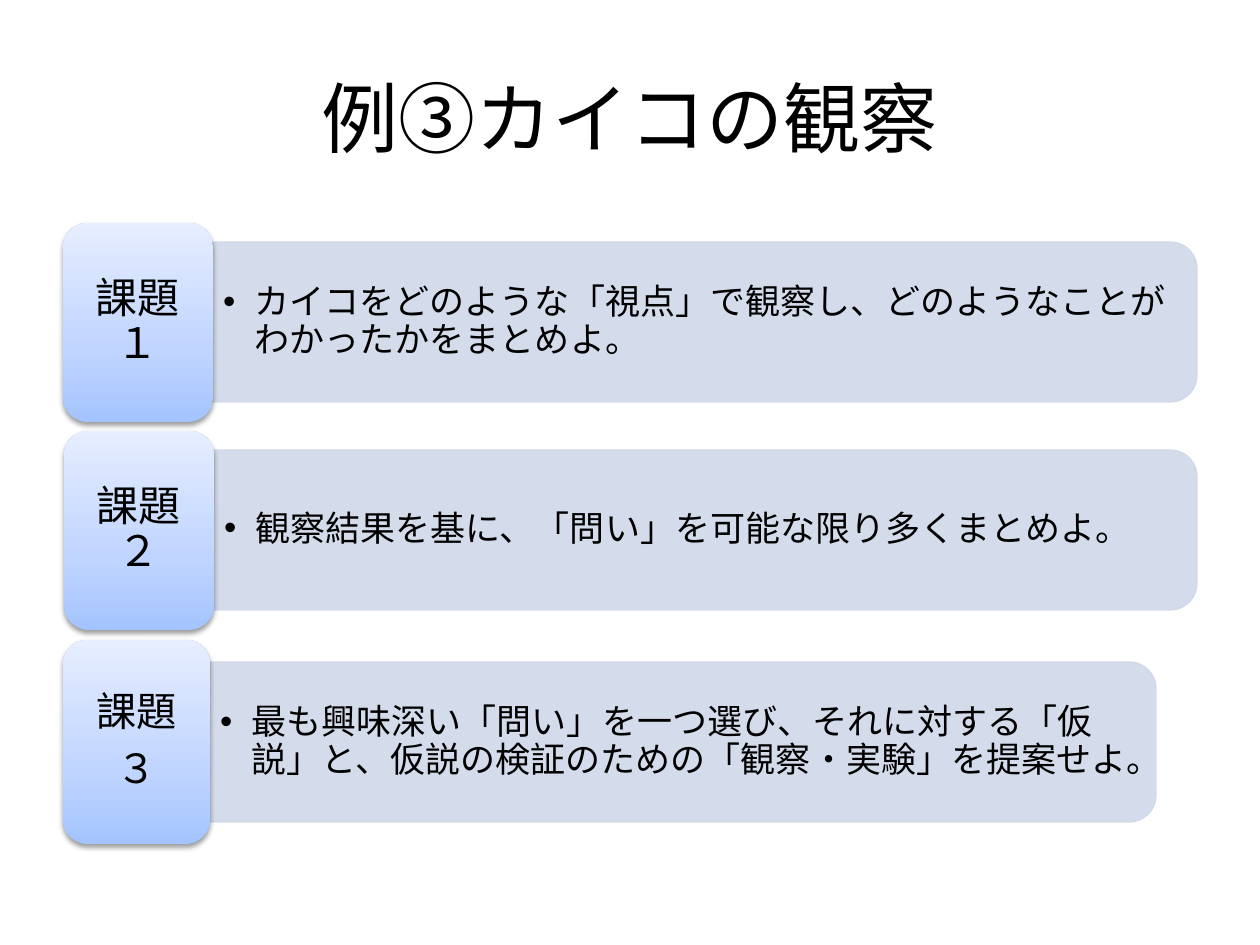
from lxml import etree
from pptx import Presentation
from pptx import util as u
from pptx.dml.color import RGBColor
from pptx.enum import shapes, text
from pptx.oxml import parse_xml
from pptx.oxml.ns import nsdecls, qn

SCALE = 914400 / 126
FONT = "Roboto"
COLORS = {"text": "000000", "panel": "D0D8E8", "low": "A4C4FF",
          "mid": "BFD4FF", "high": "E6EEFF"}
TASKS = [
    ((63, 223, 150, 199), 1197, ["課題１"], 24,
     "カイコをどのような「視点」で観察し、どのようなことがわかったかをまとめよ。"),
    ((64, 431, 150, 199), 1197, ["課題２"], 24,
     "観察結果を基に、「問い」を可能な限り多くまとめよ。"),
    ((63, 640, 147, 204), 1156, ["課題", "３"], 23,
     "最も興味深い「問い」を一つ選び、それに対する「仮説」と、仮説の検証のための「観察・実験」を提案せよ。"),
]
PANEL_H = 160


def px(n):
    return u.Emu(round(n * SCALE))


def add_run(p, words, size):
    r = p.add_run()
    r.text = words
    r.font.size = u.Pt(size)
    r.font.name = FONT
    r.font.color.rgb = RGBColor.from_string(COLORS["text"])


def add_title(s, box):
    sp = s.shapes.title
    sp.left, sp.top, sp.width, sp.height = map(px, box)
    tf = sp.text_frame
    tf.vertical_anchor = text.MSO_ANCHOR.MIDDLE
    p = tf.paragraphs[0]
    p.alignment = text.PP_ALIGN.CENTER
    add_run(p, "例③カイコの観察", 44)


def add_panel(s, box):
    x, y, w, h = box
    sp = s.shapes.add_shape(shapes.MSO_SHAPE.ROUND_2_SAME_RECTANGLE,
                            px(x + (w - h) / 2), px(y + (h - w) / 2), px(h), px(w))
    sp.rotation = 90
    sp.shadow.inherit = False
    sp.line.width = u.Pt(0.75)
    for fill in (sp.fill, sp.line.fill):
        fill.solid()
        fill.fore_color.rgb = RGBColor.from_string(COLORS["panel"])
    for clr in sp._element.spPr.iter(qn("a:srgbClr")):
        etree.SubElement(clr, qn("a:alpha")).set("val", "90000")


def add_bullet(s, box, words):
    tf = s.shapes.add_textbox(*map(px, box)).text_frame
    tf.word_wrap = True
    tf.vertical_anchor = text.MSO_ANCHOR.MIDDLE
    tf.margin_left = tf.margin_right = px(10)
    tf.margin_top = tf.margin_bottom = px(5)
    p = tf.paragraphs[0]
    p.line_spacing = 0.9
    pPr = p._p.get_or_add_pPr()
    pPr.set("marL", str(u.Inches(0.25)))
    pPr.set("indent", str(-u.Inches(0.25)))
    etree.SubElement(pPr, qn("a:buFont")).set("typeface", "Arial")
    etree.SubElement(pPr, qn("a:buChar")).set("char", "•")
    add_run(p, words, 20)


def add_tile(s, box, lines, size):
    sp = s.shapes.add_shape(shapes.MSO_SHAPE.ROUNDED_RECTANGLE, *map(px, box))
    sp.line.fill.background()
    spPr = sp._element.spPr
    stops = "".join(
        f'<a:gs pos="{pos}"><a:srgbClr val="{COLORS[name]}"/></a:gs>'
        for pos, name in ((0, "low"), (35000, "mid"), (100000, "high")))
    spPr.find(qn("a:ln")).addprevious(parse_xml(
        f'<a:gradFill {nsdecls("a")} rotWithShape="1"><a:gsLst>{stops}</a:gsLst>'
        '<a:lin ang="16200000" scaled="0"/></a:gradFill>'))
    spPr.append(parse_xml(
        f'<a:effectLst {nsdecls("a")}><a:outerShdw blurRad="{u.Pt(3.1)}" '
        f'dist="{u.Pt(1.6)}" dir="5400000" rotWithShape="0">'
        f'<a:srgbClr val="{COLORS["text"]}"><a:alpha val="38000"/></a:srgbClr>'
        '</a:outerShdw></a:effectLst>'))
    tf = sp.text_frame
    tf.word_wrap = True
    tf.vertical_anchor = text.MSO_ANCHOR.MIDDLE
    for i, line in enumerate(lines):
        p = tf.add_paragraph() if i else tf.paragraphs[0]
        p.alignment = text.PP_ALIGN.CENTER
        p.line_spacing = 0.9
        if i < len(lines) - 1:
            p.space_after = u.Pt(8)
        add_run(p, line, size)


def add_task(s, box, right, lines, size, words):
    x, y, w, h = box
    left, top = x + w, y + (h - PANEL_H) // 2
    add_panel(s, (left, top, right - left, PANEL_H))
    add_bullet(s, (left, top + 8, right - left - 8, PANEL_H - 16), words)
    add_tile(s, box, lines, size)


def main():
    prs = Presentation()
    prs.slide_width, prs.slide_height = px(1260), px(945)
    s = prs.slides.add_slide(prs.slide_layouts[5])
    add_title(s, (63, 38, 1134, 157))
    for task in TASKS:
        add_task(s, *task)
    prs.save("out.pptx")


if __name__ == "__main__":
    main()
